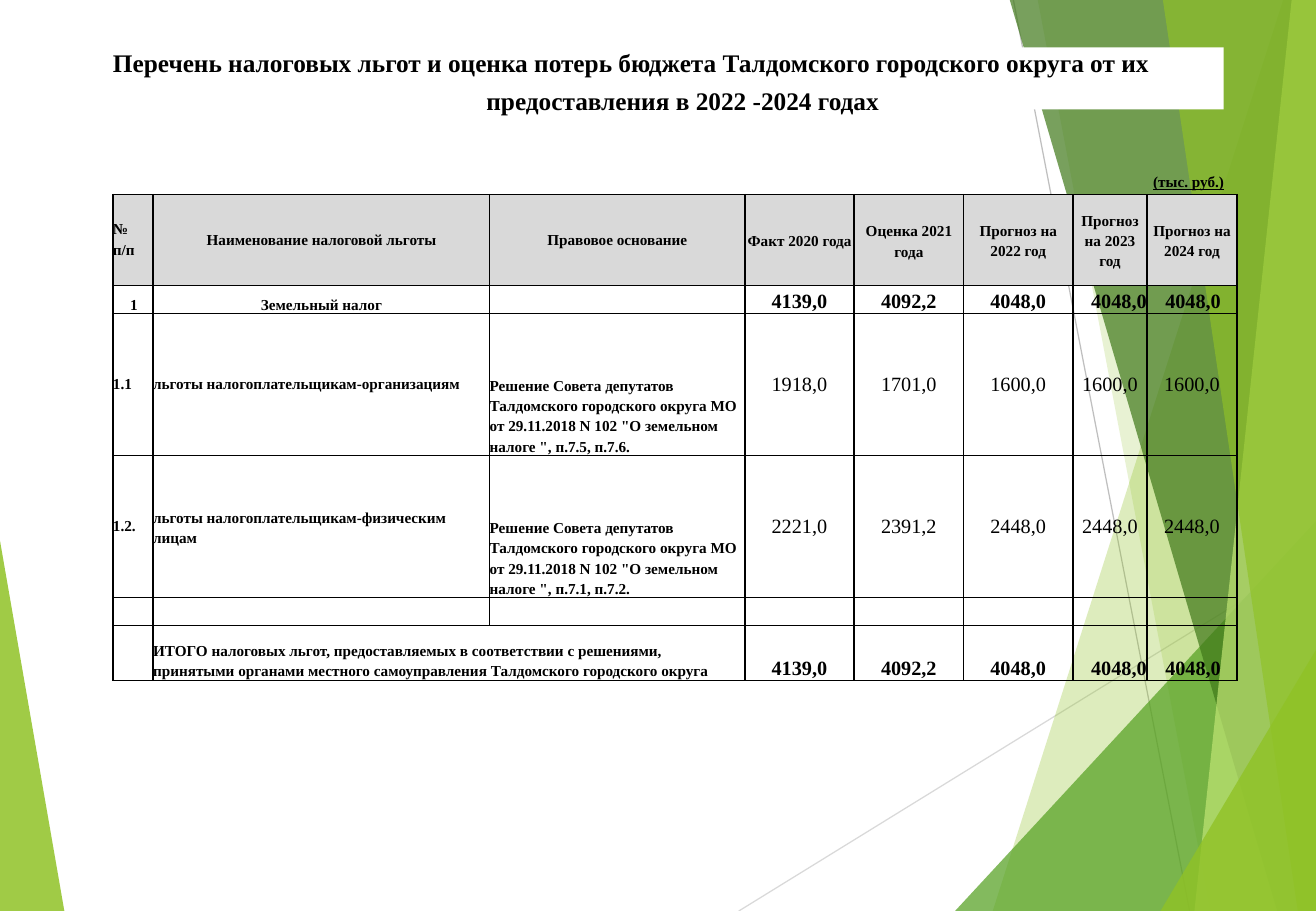
import pptx
import pptx.util
import pptx.dml.color
import pptx.enum.shapes
import pptx.enum.text
from lxml import etree
from pptx.oxml.ns import qn

Inches, Pt = pptx.util.Inches, pptx.util.Pt
CENTER = pptx.enum.text.PP_ALIGN.CENTER
ANCHOR = pptx.enum.text.MSO_ANCHOR

WIDTH, HEIGHT = 10.83, 7.5
COLORS = {
    "text": "000000", "paper": "FFFFFF", "header": "D9D9D9",
    "ray_light": "D9D9D9", "ray_dark": "BFBFBF", "lime": "90C226",
    "green": "54A021", "forest": "3F7819", "pale": "C0E474",
}

# Decorative facets: colour, opacity in percent, corner points
FACETS = [
    ("lime", 30, [(10.56, 0), (8.17, 7.5), (WIDTH, 7.5), (WIDTH, 0)]),
    ("lime", 20, [(8.54, 0), (9.96, 7.5), (WIDTH, 7.5), (WIDTH, 0)]),
    ("green", 72, [(7.86, 7.5), (WIDTH, 4.29), (WIDTH, 7.5)]),
    ("forest", 70, [(8.31, 0), (10.51, 7.5), (WIDTH, 7.5), (WIDTH, 0)]),
    ("pale", 70, [(10.63, 0), (9.83, 7.5), (WIDTH, 7.5), (WIDTH, 0)]),
    ("lime", 65, [(9.57, 0), (10.68, 7.5), (WIDTH, 7.5), (WIDTH, 0)]),
    ("lime", 80, [(9.55, 7.5), (WIDTH, 5.35), (WIDTH, 7.5)]),
]

COLUMN_WIDTHS = [0.33, 2.77, 2.1, 0.9, 0.9, 0.9, 0.61, 0.74]
ROW_HEIGHTS = [0.75, 0.23, 1.17, 1.17, 0.23, 0.45]

LABEL = {"size": 9, "bold": True}
LEGAL = {**LABEL, "anchor": ANCHOR.BOTTOM, "line_spacing": Pt(12)}
HEADING = {**LABEL, "alignment": CENTER}
YEAR_PAST = {**HEADING, "line_spacing": Pt(12.2)}
YEAR_PLAN = {**HEADING, "line_spacing": Pt(11.8)}
AMOUNT = {"size": 12, "alignment": CENTER}
TOTAL = {**AMOUNT, "bold": True, "anchor": ANCHOR.BOTTOM}
TOTAL_INDENTED = {"size": 12, "bold": True, "anchor": ANCHOR.BOTTOM, "indent": 0.15}
TOTAL_FORMATS = [TOTAL] * 3 + [TOTAL_INDENTED] * 2
EMPTY = ("", LABEL)

LEGAL_BASIS = ("Решение Совета депутатов Талдомского городского округа МО "
               "от 29.11.2018 N 102 \"О земельном налоге \", ")
TOTAL_AMOUNTS = ["4139,0", "4092,2"] + ["4048,0"] * 3
TOTALS = list(zip(TOTAL_AMOUNTS, TOTAL_FORMATS))


def benefit_row(number, payers, clauses, amounts, payer_format):
    return [(number, LABEL), (payers, payer_format), (LEGAL_BASIS + clauses, LEGAL),
            *[(amount, AMOUNT) for amount in amounts]]


ROWS = [
    [("№\nп/п", {**LABEL, "space_after": Pt(2.1)}),
     ("Наименование налоговой льготы", HEADING), ("Правовое основание", HEADING),
     ("Факт 2020 года", YEAR_PAST), ("Оценка 2021 года", YEAR_PAST),
     *[(f"Прогноз на {year} год", YEAR_PLAN) for year in (2022, 2023, 2024)]],
    [("1", {**LABEL, "anchor": ANCHOR.BOTTOM, "indent": 0.14}),
     ("Земельный налог", {**HEADING, "anchor": ANCHOR.BOTTOM}), EMPTY, *TOTALS],
    benefit_row("1.1", "льготы налогоплательщикам-организациям", "п.7.5, п.7.6.",
                ["1918,0", "1701,0"] + ["1600,0"] * 3, LABEL),
    benefit_row("1.2.", "льготы налогоплательщикам-физическим лицам", "п.7.1, п.7.2.",
                ["2221,0", "2391,2"] + ["2448,0"] * 3,
                {**LABEL, "line_spacing": Pt(12.2)}),
    [EMPTY] * len(COLUMN_WIDTHS),
    [EMPTY, ("ИТОГО налоговых льгот, предоставляемых в соответствии с решениями, "
             "принятыми органами местного самоуправления Талдомского городского округа",
             LEGAL), EMPTY, *TOTALS],
]


def rgb(name):
    return pptx.dml.color.RGBColor.from_string(COLORS[name])


class BudgetSlide:
    font_name = "Times New Roman"

    def __init__(self, slide):
        self.shapes = slide.shapes

    def facet(self, color, opacity, points):
        corners = [(Inches(x), Inches(y)) for x, y in points]
        builder = self.shapes.build_freeform(*corners[0])
        builder.add_line_segments(corners[1:], close=True)
        facet = builder.convert_to_shape()
        facet.shadow.inherit = False
        facet.line.fill.background()
        facet.fill.solid()
        facet.fill.fore_color.rgb = rgb(color)
        tint = facet._element.spPr.find(".//" + qn("a:srgbClr"))
        etree.SubElement(tint, qn("a:alpha"), val=str(opacity * 1000))

    def ray(self, color, start, end):
        ray = self.shapes.add_connector(
            pptx.enum.shapes.MSO_CONNECTOR.STRAIGHT,
            *[Inches(value) for value in start + end])
        ray.line.color.rgb = rgb(color)
        ray.line.width = Pt(0.75)
        etree.SubElement(ray._element.spPr, qn("a:effectLst"))

    def paragraph(self, paragraph, text, size, bold=False, underline=False,
                  indent=0, **layout):
        for attribute, value in layout.items():
            setattr(paragraph, attribute, value)
        if indent:
            paragraph._p.get_or_add_pPr().set("marL", str(Inches(indent)))
        if not text:
            etree.SubElement(paragraph._p, qn("a:endParaRPr"), sz=str(size * 100))
            return
        run = paragraph.add_run()
        run.text = text
        font = {"name": self.font_name, "size": Pt(size), "bold": bold,
                "underline": underline}
        for attribute, value in font.items():
            setattr(run.font, attribute, value)
        run.font.color.rgb = rgb("text")

    def no_margins(self, holder):
        for side in ("left", "top", "right", "bottom"):
            setattr(holder, f"margin_{side}", 0)

    def title(self, box, lines):
        banner = self.shapes.add_shape(
            pptx.enum.shapes.MSO_SHAPE.RECTANGLE, *[Inches(value) for value in box])
        banner.shadow.inherit = False
        banner.line.fill.background()
        banner.fill.solid()
        banner.fill.fore_color.rgb = rgb("paper")
        frame = banner.text_frame
        self.no_margins(frame)
        frame.word_wrap = True
        frame.vertical_anchor = ANCHOR.TOP
        for index, (text, style) in enumerate(lines):
            paragraph = frame.add_paragraph() if index else frame.paragraphs[0]
            self.paragraph(paragraph, text, size=15, bold=True, **style)

    def unit_note(self, box, text):
        note = self.shapes.add_textbox(*[Inches(value) for value in box])
        self.no_margins(note.text_frame)
        note.text_frame.word_wrap = False
        self.paragraph(note.text_frame.paragraphs[0], text, underline=True, **LABEL)

    def borders(self, cell):
        properties = cell._tc.get_or_add_tcPr()
        widths = {"lnL": 1, "lnR": 1, "lnT": 0.75, "lnB": 0.75}
        for position, (side, width) in enumerate(widths.items()):
            line = etree.Element(qn(f"a:{side}"), w=str(Pt(width)))
            fill = etree.SubElement(line, qn("a:solidFill"))
            etree.SubElement(fill, qn("a:srgbClr"), val=COLORS["text"])
            properties.insert(position, line)

    def cell(self, cell, text, style, is_header):
        layout = {"alignment": pptx.enum.text.PP_ALIGN.LEFT, **style}
        cell.vertical_anchor = layout.pop("anchor", ANCHOR.MIDDLE)
        self.no_margins(cell)
        for index, line in enumerate(text.split("\n")):
            frame = cell.text_frame
            paragraph = frame.add_paragraph() if index else frame.paragraphs[0]
            self.paragraph(paragraph, line, **layout)
        if is_header:
            cell.fill.solid()
            cell.fill.fore_color.rgb = rgb("header")
        else:
            cell.fill.background()
        self.borders(cell)

    def table(self, left, top, rows):
        table = self.shapes.add_table(
            len(rows), len(COLUMN_WIDTHS), Inches(left), Inches(top),
            Inches(sum(COLUMN_WIDTHS)), Inches(sum(ROW_HEIGHTS))).table
        table.first_row = table.horz_banding = False
        for column, width in zip(table.columns, COLUMN_WIDTHS):
            column.width = Inches(width)
        for row, height in zip(table.rows, ROW_HEIGHTS):
            row.height = Inches(height)
        for r, row in enumerate(rows):
            for c, (text, style) in enumerate(row):
                self.cell(table.cell(r, c), text, style, is_header=r == 0)
        last = len(rows) - 1
        table.cell(last, 1).merge(table.cell(last, 2))


def main():
    deck = pptx.Presentation()
    deck.slide_width, deck.slide_height = Inches(WIDTH), Inches(HEIGHT)
    page = BudgetSlide(deck.slides.add_slide(deck.slide_layouts[6]))
    page.facet("lime", 85, [(0, 4.45), (0.53, HEIGHT), (0, HEIGHT)])
    page.ray("ray_light", (6.08, HEIGHT), (WIDTH, 4.57))
    page.ray("ray_dark", (8.34, 0), (9.79, HEIGHT))
    for facet in FACETS:
        page.facet(*facet)
    page.title((0.93, 0.39, 9.14, 0.51), [
        ("Перечень налоговых льгот и оценка потерь бюджета Талдомского городского "
         "округа от их",
         {"alignment": pptx.enum.text.PP_ALIGN.LEFT, "space_after": Pt(4.2)}),
        ("предоставления в 2022 -2024 годах", {"alignment": CENTER, "indent": 0.24}),
    ])
    page.unit_note((9.49, 1.42, 1.16, 0.37), "(тыс. руб.)")
    page.table(0.93, 1.6, ROWS)
    deck.save("out.pptx")


if __name__ == "__main__":
    main()
